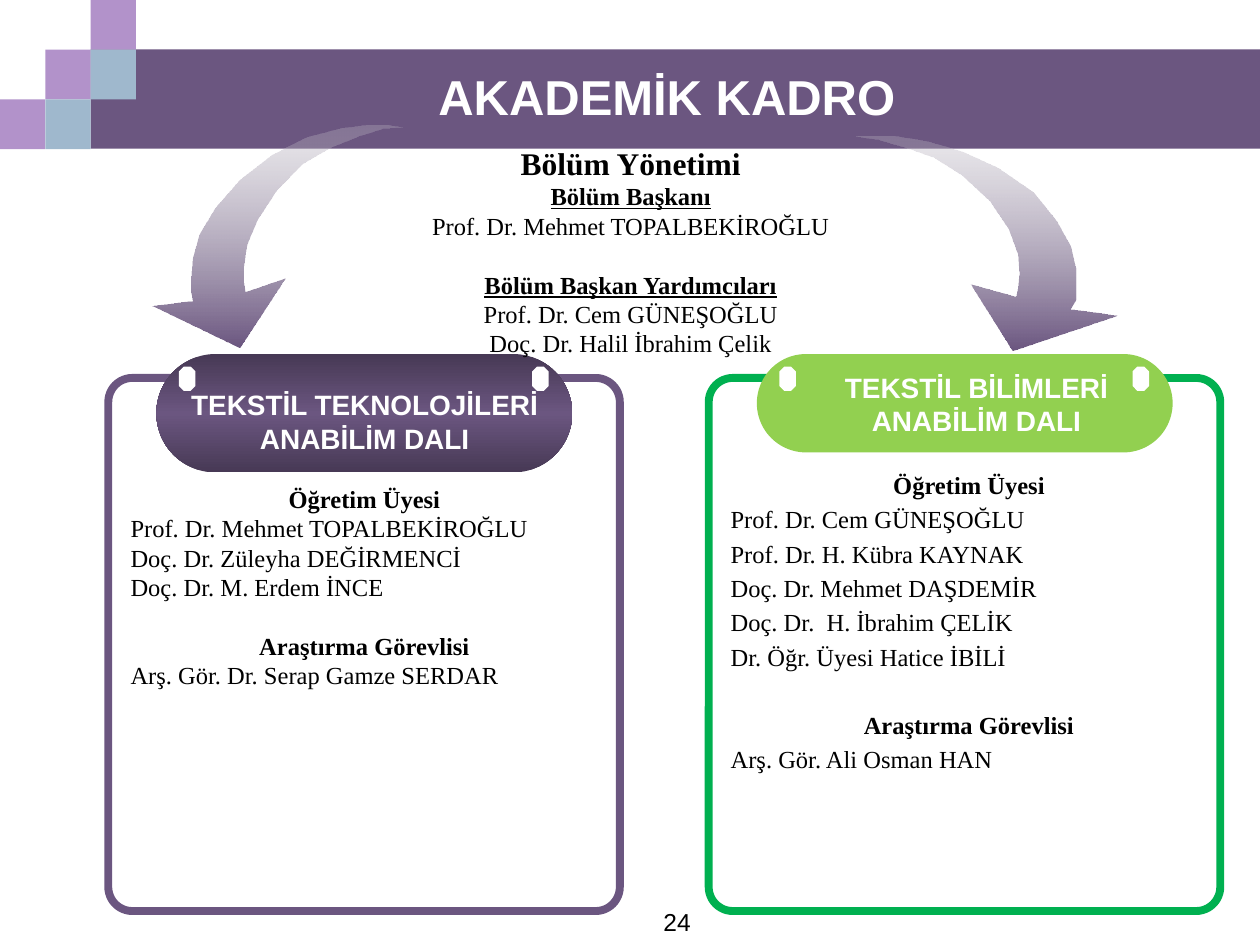
import pptx
import pptx.util
import pptx.oxml
import pptx.oxml.ns
from pptx.dml.color import RGBColor
from pptx.enum.shapes import MSO_SHAPE
from pptx.enum.text import MSO_ANCHOR, PP_ALIGN

Pt = pptx.util.Pt
SANS, SERIF = "Arial", "Times New Roman"
COLORS = {
    "purple": "6B5680", "lilac": "B292CA", "blue": "9FB8CD", "dusk": "473955",
    "mist": "BDB8C3", "green": "00B050", "lime": "92D050",
    "white": "FFFFFF", "black": "000000",
}
LINE_GAP = 16.8  # one empty 14 pt line

RIGHT_ARROW = [
    (0, 0), (13, 2), (27, 6), (44, 12), (60, 22), (76, 37), (87, 53), (92, 67),
    (93, 78), (92, 86), (91, 91), (65, 84), (89, 122), (149, 102), (122, 98),
    (125, 93), (125, 85), (125, 75), (122, 62), (114, 48), (101, 32), (81, 18),
    (61, 9), (40, 3), (22, 0), (9, 0),
]
LEFT_ARROW = [
    (143, 1), (131, 2), (118, 6), (103, 12), (86, 22), (71, 37), (60, 54), (54, 68),
    (52, 81), (52, 89), (53, 95), (76, 87), (50, 127), (0, 103), (23, 100),
    (22, 95), (22, 87), (23, 76), (27, 62), (36, 47), (50, 31), (68, 17),
    (88, 7), (107, 2), (122, 0), (135, 0),
]


def rgb(name):
    return RGBColor.from_string(COLORS[name])


def fill_gradient(shape, stops):
    """Fill from top to bottom; each stop is (percent, colour, opacity percent)."""
    shape.fill.background()
    marks = "".join(
        f'<a:gs pos="{at * 1000}"><a:srgbClr val="{COLORS[color]}">'
        f'<a:alpha val="{opacity * 1000}"/></a:srgbClr></a:gs>'
        for at, color, opacity in stops)
    gradient = pptx.oxml.parse_xml(
        f'<a:gradFill {pptx.oxml.ns.nsdecls("a")} rotWithShape="1"><a:gsLst>{marks}</a:gsLst>'
        '<a:lin ang="5400000" scaled="0"/></a:gradFill>')
    properties = shape.element.spPr
    properties.replace(properties.find(pptx.oxml.ns.qn("a:noFill")), gradient)


def add_shape(page, kind, box, fill=None, adjust=None):
    shape = page.shapes.add_shape(kind, *map(Pt, box))
    shape.shadow.inherit = False
    shape.line.fill.background()
    if fill:
        shape.fill.solid()
        shape.fill.fore_color.rgb = rgb(fill)
    else:
        shape.fill.background()
    if adjust is not None:
        shape.adjustments[0] = adjust
    return shape


def add_text(page, box, lines, font, color="black", anchor=MSO_ANCHOR.TOP, wrap=True):
    """Each line is (text, size, style, alignment, space before); style holds b and/or u."""
    frame = page.shapes.add_textbox(*map(Pt, box)).text_frame
    frame.word_wrap = wrap
    frame.vertical_anchor = anchor
    for index, (text, size, style, alignment, before) in enumerate(lines):
        para = frame.paragraphs[0] if index == 0 else frame.add_paragraph()
        para.text = text
        para.alignment = alignment
        para.space_before = Pt(before)
        para.font.name = font
        para.font.size = Pt(size)
        para.font.bold = "b" in style
        para.font.underline = "u" in style
        para.font.color.rgb = rgb(color)


def add_banner(page, box, title):
    left, top, width, height = box
    add_shape(page, MSO_SHAPE.RECTANGLE, (left + 51.8, top + 28.2, width - 51.8, 56.8), "purple")
    side, rise = 25.9, 28.4
    tiles = [(0, 2, "lilac"), (1, 1, "lilac"), (2, 0, "lilac"), (2, 1, "blue"), (1, 2, "blue")]
    for column, row, color in tiles:
        add_shape(page, MSO_SHAPE.RECTANGLE,
                  (left + column * side, top + row * rise, side, rise), color)
    add_text(page, (left + 90, top + 36, 582, 38),
             [(title, 28, "b", PP_ALIGN.CENTER, 0)], SANS, "white", MSO_ANCHOR.MIDDLE)


def add_arrow(page, left, top, outline):
    builder = page.shapes.build_freeform(Pt(left + outline[0][0]), Pt(top + outline[0][1]))
    builder.add_line_segments([(Pt(left + x), Pt(top + y)) for x, y in outline[1:]])
    arrow = builder.convert_to_shape()
    arrow.shadow.inherit = False
    arrow.line.fill.background()
    fill_gradient(arrow, [(0, "mist", 32), (100, "purple", 100)])


def add_management(page, box):
    center = PP_ALIGN.CENTER
    add_text(page, box, [
        ("Bölüm Yönetimi", 18, "b", center, 0),
        ("Bölüm Başkanı", 14, "bu", center, 0),
        ("Prof. Dr. Mehmet TOPALBEKİROĞLU", 14, "", center, 0),
        ("Bölüm Başkan Yardımcıları", 14, "bu", center, LINE_GAP),
        ("Prof. Dr. Cem GÜNEŞOĞLU", 14, "", center, 0),
        ("Doç. Dr. Halil İbrahim Çelik", 14, "", center, 0),
    ], SERIF)


def add_department(page, box, color, cap_height, cap_fill, heading, heading_box,
                   staff, staff_box, spacing):
    """Place a framed panel with a capsule heading; inner boxes are relative to box."""
    left, top, width, height = box
    frame = add_shape(page, MSO_SHAPE.ROUNDED_RECTANGLE, box, adjust=0.047)
    frame.line.color.rgb = rgb(color)
    frame.line.width = Pt(4.5)
    cap = add_shape(page, MSO_SHAPE.ROUNDED_RECTANGLE,
                    (left + 27.5, top - 13.7, 237.6, cap_height), cap_fill, 0.5)
    if not cap_fill:
        fill_gradient(cap, [(0, "dusk", 100), (50, "purple", 100), (100, "dusk", 100)])
    for offset in (40.4, 242.2):
        add_shape(page, MSO_SHAPE.OCTAGON, (left + offset, top - 6.5, 9.4, 13.9), "white", 0.293)

    def place(inner):
        return (left + inner[0], top + inner[1], inner[2], inner[3])

    add_text(page, place(heading_box),
             [(text, 16, "b", PP_ALIGN.CENTER, 0) for text in heading],
             SANS, "white", wrap=False)
    lines = []
    for group, (role, names) in enumerate(staff):
        gap = (LINE_GAP + spacing) * group
        lines.append((role, 14, "b", PP_ALIGN.CENTER, spacing + gap))
        lines += [(name, 14, "", PP_ALIGN.LEFT, spacing) for name in names]
    add_text(page, place(staff_box), lines, SERIF)


def main():
    deck = pptx.Presentation()
    deck.slide_width, deck.slide_height = Pt(720), Pt(540)
    page = deck.slides.add_slide(deck.slide_layouts[6])

    add_banner(page, (0, 0, 720, 85), "AKADEMİK KADRO")
    add_text(page, (234, 514.8, 167.8, 25.2), [("24", 14, "", PP_ALIGN.RIGHT, 0)], SANS)
    add_arrow(page, 489.6, 78.3, RIGHT_ARROW)
    add_department(
        page, (61.9, 216, 292.3, 304.6), "purple", 67.7, None,
        ["TEKSTİL TEKNOLOJİLERİ", "ANABİLİM DALI"], (36.7, 2.2, 219.6, 46.1),
        [("Öğretim Üyesi", ["Prof. Dr. Mehmet TOPALBEKİROĞLU",
                            "Doç. Dr. Züleyha DEĞİRMENCİ",
                            "Doç. Dr. M. Erdem İNCE"]),
         ("Araştırma Görevlisi", ["Arş. Gör. Dr. Serap Gamze SERDAR"])],
        (5.6, 56.9, 281.5, 126), 0)
    add_department(
        page, (405, 216, 292.3, 304.6), "green", 56.2, "lime",
        ["TEKSTİL BİLİMLERİ", "ANABİLİM DALI"], (67.3, -8, 171.4, 46.1),
        [("Öğretim Üyesi", ["Prof. Dr. Cem GÜNEŞOĞLU",
                            "Prof. Dr. H. Kübra KAYNAK",
                            "Doç. Dr. Mehmet DAŞDEMİR",
                            "Doç. Dr.  H. İbrahim ÇELİK",
                            "Dr. Öğr. Üyesi Hatice İBİLİ"]),
         ("Araştırma Görevlisi", ["Arş. Gör. Ali Osman HAN"])],
        (5.4, 49, 286.6, 187.2), 2.8)
    add_arrow(page, 87.1, 71.8, LEFT_ARROW)
    add_management(page, (135.4, 78.5, 450, 147.6))
    deck.save("out.pptx")


if __name__ == "__main__":
    main()
